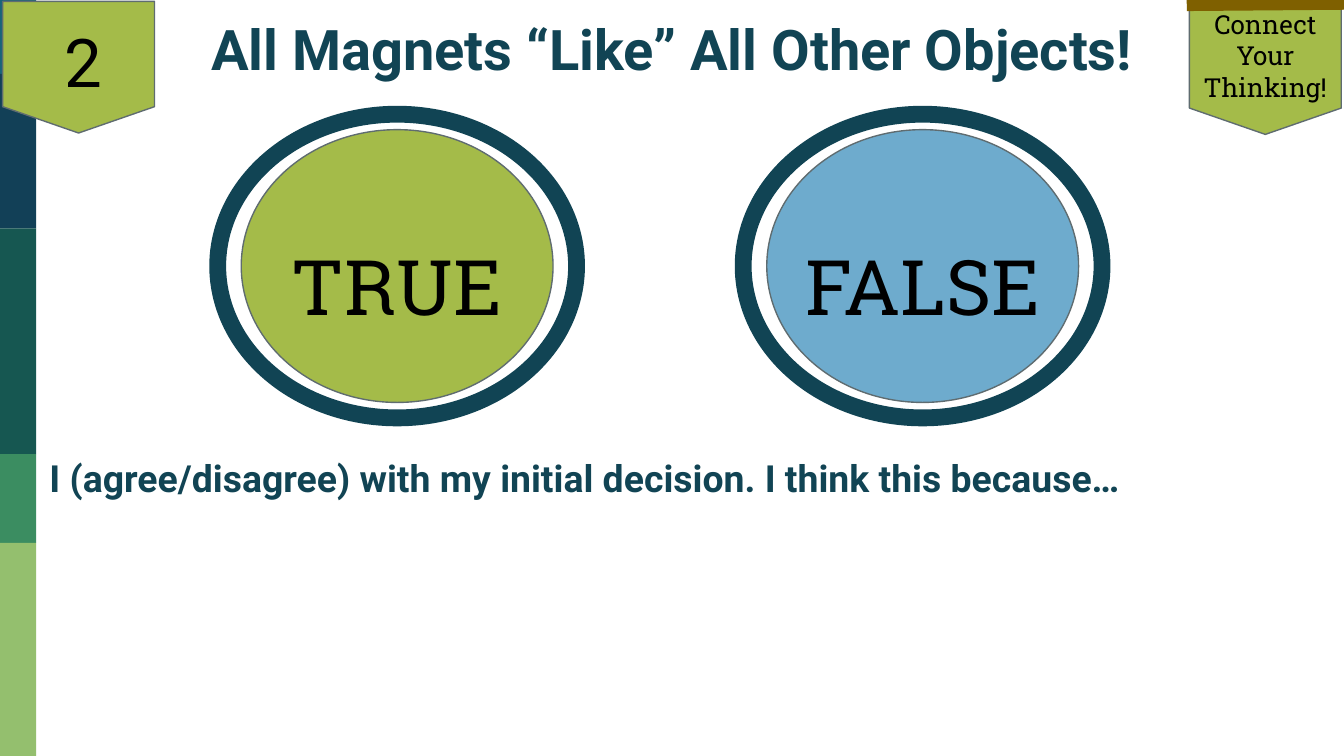
from itertools import pairwise

from lxml.etree import SubElement
from pptx import Presentation
from pptx.dml.color import RGBColor
from pptx.enum.shapes import MSO_CONNECTOR as Connector, MSO_SHAPE as Shape
from pptx.enum.text import MSO_ANCHOR as Anchor, PP_ALIGN as Align
from pptx.oxml.ns import qn
from pptx.util import Inches, Pt

COLUMNS, ROWS = 100, 56.25
SLIDE_W, SLIDE_H = Inches(10), Inches(5.625)
NAVY, GREEN, BLUE, GREY, BROWN = "114454", "A4BB49", "6EABCD", "5F6C70", "7F6000"
HEADING = {"name": "Roboto", "bold": True}
SLAB = {"name": "Roboto Slab"}


def rgb(value):
    """Turn a hex string into a colour."""
    return RGBColor.from_string(value)


def grid(*lengths):
    """Turn alternating columns and rows into slide lengths."""
    units = SLIDE_W / COLUMNS, SLIDE_H / ROWS
    return [round(length * units[i % 2]) for i, length in enumerate(lengths)]


def add_figure(slide, kind, box, fill=None, line=None, weight=0.75):
    """Place a preset shape with an optional fill and outline."""
    figure = slide.shapes.add_shape(kind, *grid(*box))
    figure.shadow.inherit = False
    if fill:
        figure.fill.solid()
        figure.fill.fore_color.rgb = rgb(fill)
    else:
        figure.fill.background()
    if line:
        figure.line.color.rgb = rgb(line)
        figure.line.width = Pt(weight)
    else:
        figure.line.fill.background()
    return figure


def write(holder, words, size, face, color="000000", align=Align.CENTER, anchor=Anchor.TOP):
    """Write one formatted paragraph into a shape or text box."""
    frame = holder.text_frame
    margins = {f"margin_{side}": Inches(0.1) for side in ("left", "top", "right", "bottom")}
    for name, value in {"word_wrap": True, "vertical_anchor": anchor, **margins}.items():
        setattr(frame, name, value)
    paragraph = frame.paragraphs[0]
    paragraph.alignment = align
    run = paragraph.add_run()
    run.text = words
    for name, value in {"size": Pt(size), **face}.items():
        setattr(run.font, name, value)
    run.font.color.rgb = rgb(color)


def add_words(slide, box, *args, **options):
    """Place a text box and write into it."""
    write(slide.shapes.add_textbox(*grid(*box)), *args, **options)


def add_side_band(slide, left, width):
    """Stack the coloured blocks down the edge."""
    edges = pairwise([0, 5.5, 17, 33.8, 40.4, ROWS])
    colors = ["18637B", "124057", "165751", "3B8D61", "94BF6E"]
    for (top, bottom), color in zip(edges, colors):
        add_figure(slide, Shape.RECTANGLE, (left, top, width, bottom - top), color)


def add_choice(slide, box, answer, color):
    """Draw a ringed disc with its answer."""
    left, top, width, height = box
    inset_x, inset_y = 1.75, 1.15
    disc = left + inset_x, top + inset_y, width - 2 * inset_x, height - 2 * inset_y
    add_figure(slide, Shape.OVAL, disc, color, GREY)
    add_figure(slide, Shape.OVAL, box, line=NAVY, weight=9)
    add_words(slide, (left + 2.6, top + 8.3, 21.5, 6), answer, 41, SLAB)


def add_tag(slide, box):
    """Draw a green pennant."""
    return add_figure(slide, Shape.FLOWCHART_OFFPAGE_CONNECTOR, box, GREEN, GREY)


def add_number_tag(slide, box, number):
    """Draw the pennant that numbers the statement."""
    left, top, _, height = box
    add_tag(slide, box)
    add_words(slide, (left + 3.6, top + 0.4, 4.1, height - 0.6), number, 36,
              {"name": "Roboto"}, align=Align.LEFT)


def add_prompt_tag(slide, box, prompt):
    """Draw the pennant with its prompt, hung from a bar."""
    left, top, _, _ = box
    write(add_tag(slide, box), prompt, 14, SLAB, anchor=Anchor.MIDDLE)
    ends = grid(left - 0.2, top, COLUMNS, top - 0.1)
    bar = slide.shapes.add_connector(Connector.STRAIGHT, *ends)
    bar.line.color.rgb = rgb(BROWN)
    bar.line.width = Pt(9)
    SubElement(bar._element.spPr, qn("a:effectLst"))


def main():
    """Build and save the slide."""
    deck = Presentation()
    deck.slide_width, deck.slide_height = SLIDE_W, SLIDE_H
    slide = deck.slides.add_slide(deck.slide_layouts[6])
    add_side_band(slide, 0, 2.7)
    add_words(slide, (6.8, 0.1, 86.4, 6.6), "All Magnets “Like” All Other Objects!",
              30, HEADING, NAVY)
    for left, answer, color in [(16.2, "TRUE", GREEN), (55.3, "FALSE", BLUE)]:
        add_choice(slide, (left, 8.5, 26.7, 22.6), answer, color)
    add_words(slide, (2.7, 32.9, 97.3, 23.35),
              "I (agree/disagree) with my initial decision. I think this because…",
              20, HEADING, NAVY, align=Align.LEFT)
    add_number_tag(slide, (0.2, 0.1, 11.3, 9.8), "2")
    add_prompt_tag(slide, (88.5, 0.2, 11.3, 9.8), "Connect Your Thinking!")
    deck.save("out.pptx")


if __name__ == "__main__":
    main()
